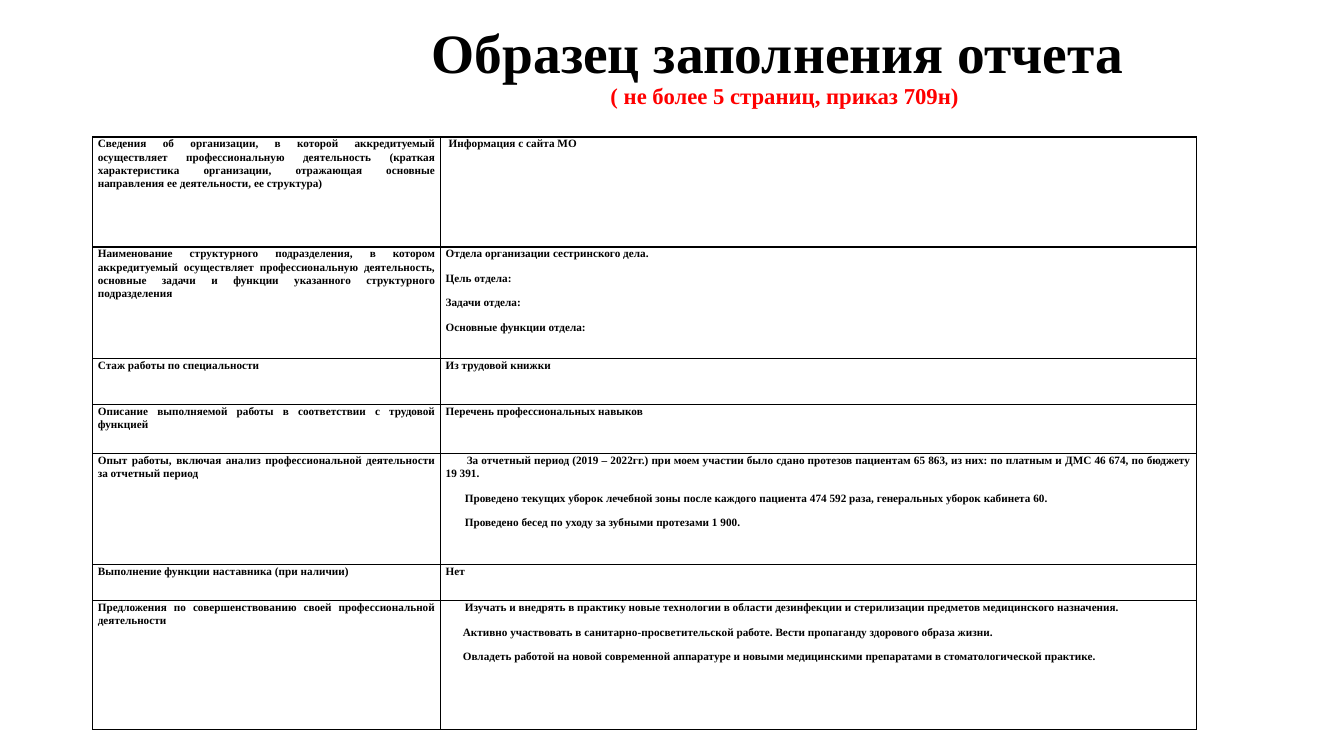
from lxml import etree
from pptx import Presentation
from pptx.dml.color import RGBColor
from pptx.enum.text import MSO_ANCHOR as Anchor, PP_ALIGN as Align
from pptx.oxml.ns import qn
from pptx.util import Inches, Pt

BLACK = RGBColor(0x00, 0x00, 0x00)
RED = RGBColor(0xFF, 0x00, 0x00)
FONT_NAME = "Times New Roman"

COLUMN_WIDTHS = [3.45, 7.5]

# Row height, left label, right paragraphs as (text, first-line indent in inches)
REPORT_ROWS = [
    (1.09,
     "Сведения об организации, в которой аккредитуемый осуществляет профессиональную "
     "деятельность (краткая характеристика организации, отражающая основные направления "
     "ее деятельности, ее структура)",
     [("Информация с сайта МО", 0.03)]),
    (1.11,
     "Наименование структурного подразделения, в котором аккредитуемый осуществляет "
     "профессиональную деятельность, основные задачи и функции указанного структурного "
     "подразделения",
     [("Отдела организации сестринского дела.", 0),
      ("Цель отдела:", 0),
      ("Задачи отдела:", 0),
      ("Основные функции отдела:", 0)]),
    (0.45, "Стаж работы по специальности", [("Из трудовой книжки", 0)]),
    (0.49,
     "Описание выполняемой работы в соответствии с трудовой функцией",
     [("Перечень профессиональных навыков", 0)]),
    (1.1,
     "Опыт работы, включая анализ профессиональной деятельности за отчетный период",
     [("За отчетный период (2019 – 2022гг.) при моем участии было сдано протезов пациентам "
       "65 863, из них: по платным и ДМС 46 674, по бюджету 19 391.", 0.21),
      ("Проведено текущих уборок лечебной зоны после каждого пациента 474 592 раза, "
       "генеральных уборок кабинета 60.", 0.19),
      ("Проведено бесед по уходу за зубными протезами 1 900.", 0.19)]),
    (0.36, "Выполнение функции наставника (при наличии)", [("Нет", 0)]),
    (1.28,
     "Предложения по совершенствованию своей профессиональной деятельности",
     [("Изучать и внедрять в практику новые технологии в области дезинфекции и стерилизации "
       "предметов медицинского назначения.", 0.19),
      ("Активно участвовать в санитарно-просветительской работе. Вести пропаганду здорового "
       "образа жизни.", 0.17),
      ("Овладеть работой на новой современной аппаратуре и новыми медицинскими препаратами "
       "в стоматологической практике.", 0.17)]),
]

CELL_FORMAT = {
    "margin_left": Inches(0.05), "margin_right": Inches(0.05),
    "margin_top": 0, "margin_bottom": 0, "vertical_anchor": Anchor.TOP,
}
CELL_PARAGRAPH_FORMAT = {
    "alignment": Align.JUSTIFY, "line_spacing": 1.07, "space_after": Pt(8),
}


def apply_format(target, values):
    for name, value in values.items():
        setattr(target, name, value)


def add_run(paragraph, text, size, color):
    run = paragraph.add_run()
    run.text = text
    apply_format(run.font, {"name": FONT_NAME, "size": Pt(size), "bold": True})
    run.font.color.rgb = color


def add_title(slide):
    box = slide.shapes.add_textbox(Inches(3.14), Inches(0.17), Inches(9.28), Inches(1))
    frame = box.text_frame
    apply_format(frame, {"word_wrap": True, "vertical_anchor": Anchor.MIDDLE})
    paragraph = frame.paragraphs[0]
    apply_format(paragraph, {"alignment": Align.CENTER, "line_spacing": 0.9})
    add_run(paragraph, "Образец заполнения отчета ", 39.6, BLACK)
    paragraph.add_line_break()
    add_run(paragraph, "( не более 5 страниц, приказ 709н)", 16.2, RED)


def add_borders(cell):
    properties = cell._tc.get_or_add_tcPr()
    for side in ("lnL", "lnR", "lnT", "lnB"):
        line = etree.SubElement(properties, qn(f"a:{side}"), w=str(Pt(1)))
        fill = etree.SubElement(line, qn("a:solidFill"))
        etree.SubElement(fill, qn("a:srgbClr"), val=str(BLACK))


def fill_cell(cell, paragraphs):
    apply_format(cell, CELL_FORMAT)
    add_borders(cell)
    cell.fill.background()
    frame = cell.text_frame
    for index, (text, indent) in enumerate(paragraphs):
        paragraph = frame.add_paragraph() if index else frame.paragraphs[0]
        apply_format(paragraph, CELL_PARAGRAPH_FORMAT)
        if indent:
            paragraph._p.get_or_add_pPr().set("indent", str(Inches(indent)))
        add_run(paragraph, text, 8, BLACK)


def add_report_table(slide):
    height = sum(row[0] for row in REPORT_ROWS)
    table = slide.shapes.add_table(
        len(REPORT_ROWS), len(COLUMN_WIDTHS), Inches(0.92), Inches(1.36),
        Inches(sum(COLUMN_WIDTHS)), Inches(height)).table
    apply_format(table, {"first_row": False, "horz_banding": False})
    for column, width in zip(table.columns, COLUMN_WIDTHS):
        column.width = Inches(width)
    for row, (row_height, label, answers) in zip(table.rows, REPORT_ROWS):
        row.height = Inches(row_height)
        fill_cell(row.cells[0], [(label, 0)])
        fill_cell(row.cells[1], answers)


def main():
    presentation = Presentation()
    presentation.slide_width = Inches(13.33)
    presentation.slide_height = Inches(7.5)
    slide = presentation.slides.add_slide(presentation.slide_layouts[6])

    # Heading with the page limit below it
    add_title(slide)
    # Sample report
    add_report_table(slide)

    presentation.save("out.pptx")


if __name__ == "__main__":
    main()
